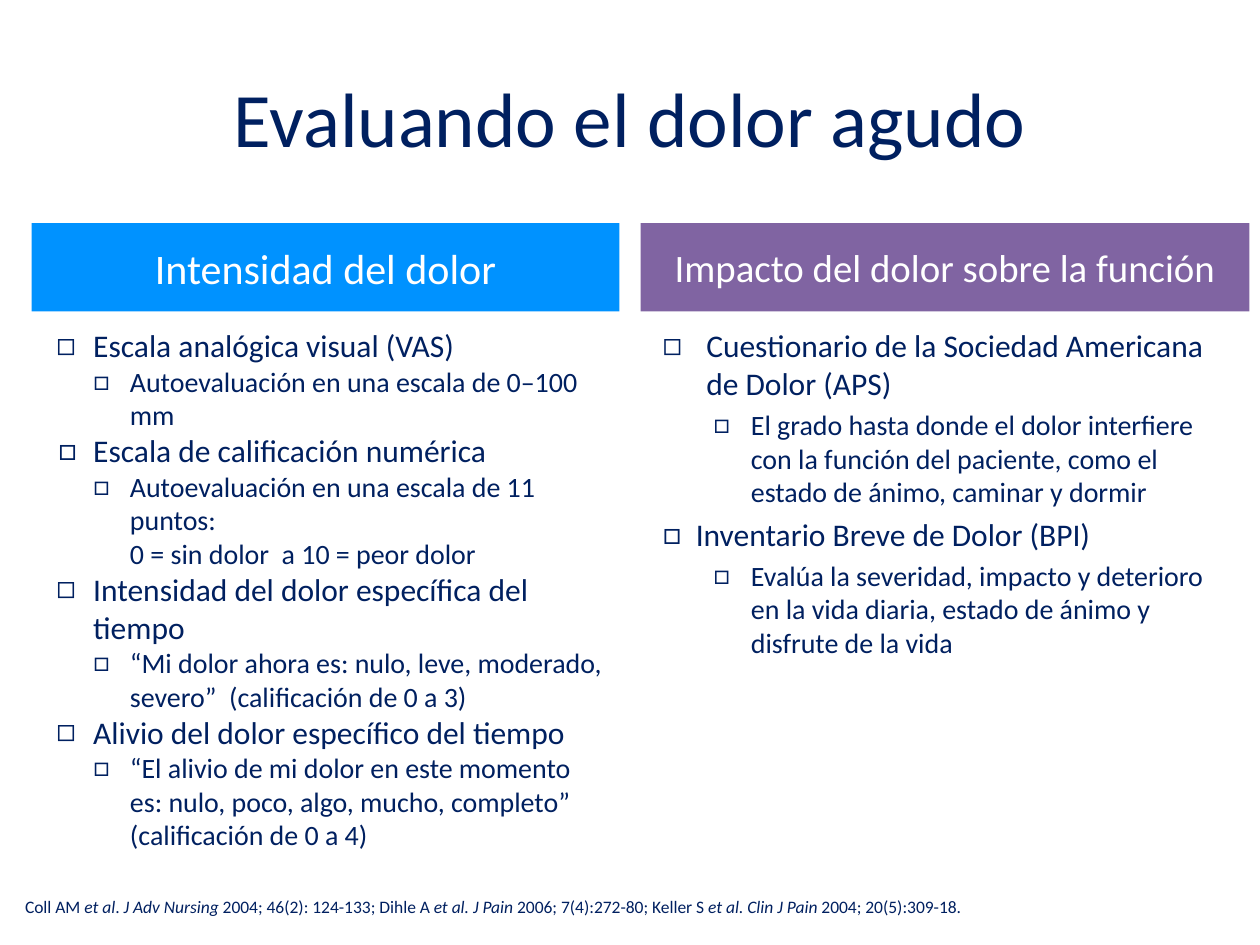
from copy import deepcopy
from lxml.etree import SubElement
from pptx import Presentation
from pptx.dml.color import RGBColor
from pptx.enum.shapes import MSO_SHAPE
from pptx.enum.text import MSO_ANCHOR, PP_ALIGN
from pptx.oxml.ns import qn
from pptx.util import Pt

NAVY = RGBColor(0x00, 0x20, 0x60)
BLUE = RGBColor(0x00, 0x92, 0xFF)
PURPLE = RGBColor(0x80, 0x64, 0xA2)
WHITE = RGBColor(0xFF, 0xFF, 0xFF)

LEFT = [
    (0, "◻", "Escala analógica visual (VAS)"),
    (1, "□", "Autoevaluación en una escala de 0–100 mm"),
    (0, "□", "Escala de calificación numérica"),
    (1, "□", "Autoevaluación en una escala de 11 puntos: \v"
             "0 = sin dolor  a 10 = peor dolor"),
    (0, "◻", "Intensidad del dolor específica del tiempo"),
    (1, "□", "“Mi dolor ahora es: nulo, leve, moderado, severo”  "
             "(calificación de 0 a 3)"),
    (0, "◻", "Alivio del dolor específico del tiempo"),
    (1, "□", "“El alivio de mi dolor en este momento es: nulo, poco, algo, "
             "mucho, completo” (calificación de 0 a 4)"),
]
RIGHT = [
    (0, "◻", "Cuestionario de la Sociedad Americana de Dolor (APS)"),
    (1, "□", "El grado hasta donde el dolor interfiere con la función del "
             "paciente, como el estado de ánimo, caminar y dormir"),
    (0, "□", "Inventario Breve de Dolor (BPI)"),
    (1, "□", "Evalúa la severidad, impacto y deterioro en la vida diaria, "
             "estado de ánimo y disfrute de la vida"),
]
LEFT_DENTS = {"◻": (21, 21), "□": (21, 20), 1: (42, 21)}
RIGHT_DENTS = {"◻": (25, 25), "□": (19, 19), 1: (50.5, 21.5)}
SOURCE = [
    ("Coll AM ", False), ("et al", True), (". ", False),
    ("J Adv Nursing ", True), ("2004; 46(2): 124-133; Dihle A ", False),
    ("et al. J Pain ", True), ("2006; 7(4):272-80; Keller S ", False),
    ("et al. Clin J Pain ", True), ("2004; 20(5):309-18.", False),
]


def style(run, size, color=NAVY, italic=False):
    """Format one run of text."""
    look = {"name": "Calibri", "size": Pt(size), "bold": False, "italic": italic}
    for key, value in look.items():
        setattr(run.font, key, value)
    run.font.color.rgb = color


def place(shape, *box):
    """Set left, top, width and height in points."""
    for key, value in zip(("left", "top", "width", "height"), box):
        setattr(shape, key, Pt(value))


def add_title(slide, text):
    """Fill and place the title placeholder."""
    title = slide.shapes.title
    place(title, 36, 21.6, 648, 90)
    title.text_frame.vertical_anchor = MSO_ANCHOR.MIDDLE
    para = title.text_frame.paragraphs[0]
    para.text = text
    para.alignment = PP_ALIGN.CENTER
    style(para.runs[0], 44)


def add_head(slide, text, left, width, fill, size):
    """Add a coloured column heading."""
    box = slide.shapes.add_shape(
        MSO_SHAPE.RECTANGLE, Pt(left), Pt(127.5), Pt(width), Pt(50.5))
    box.shadow.inherit = False
    box.fill.solid()
    box.fill.fore_color.rgb = fill
    box.line.fill.background()
    box.text_frame.vertical_anchor = MSO_ANCHOR.MIDDLE
    para = box.text_frame.paragraphs[0]
    para.text = text
    para.alignment = PP_ALIGN.CENTER
    style(para.runs[0], size, WHITE)


def add_frame(slide, *box):
    """Add a wrapping text box and return its frame."""
    frame = slide.shapes.add_textbox(*map(Pt, box)).text_frame
    frame.word_wrap = True
    return frame


def add_bullet(para, mark, margin, hang):
    """Give a paragraph a bullet with a hanging indent."""
    props = para._p.get_or_add_pPr()
    props.set("marL", str(Pt(margin)))
    props.set("indent", str(-Pt(hang)))
    SubElement(props, qn("a:buFont")).set("typeface", "Calibri")
    SubElement(props, qn("a:buChar")).set("char", mark)


def add_list(slide, items, dents, box, gap=0):
    """Add a bulleted list of two levels."""
    frame = add_frame(slide, *box)
    for num, (level, mark, text) in enumerate(items):
        para = frame.add_paragraph() if num else frame.paragraphs[0]
        size = 16 if level else 18
        para.text = text
        para.level = level
        add_bullet(para, mark, *dents[level or mark])
        para.space_before = Pt(gap * size if num else 0)
        for run in para.runs:
            style(run, size)
        for brk in para._p.findall(qn("a:br")):
            brk.insert(0, deepcopy(para.runs[0]._r.rPr))


def add_source(slide):
    """Add the line of references."""
    para = add_frame(slide, 7.2, 508.3, 705, 19.4).paragraphs[0]
    for text, italic in SOURCE:
        run = para.add_run()
        run.text = text
        style(run, 10, italic=italic)


def main():
    """Build and save the slide."""
    deck = Presentation()
    deck.slide_width, deck.slide_height = Pt(720), Pt(540)
    slide = deck.slides.add_slide(deck.slide_layouts[5])
    add_title(slide, "Evaluando el dolor agudo")
    add_list(slide, LEFT, LEFT_DENTS, (25.2, 183, 328.3, 308))
    add_list(slide, RIGHT, RIGHT_DENTS, (371.5, 183, 323.3, 293), 0.2)
    add_head(slide, "Intensidad del dolor", 18, 336, BLUE, 24)
    add_head(slide, "Impacto del dolor sobre la función", 366, 348, PURPLE, 22.2)
    add_source(slide)
    deck.save("out.pptx")


if __name__ == "__main__":
    main()
